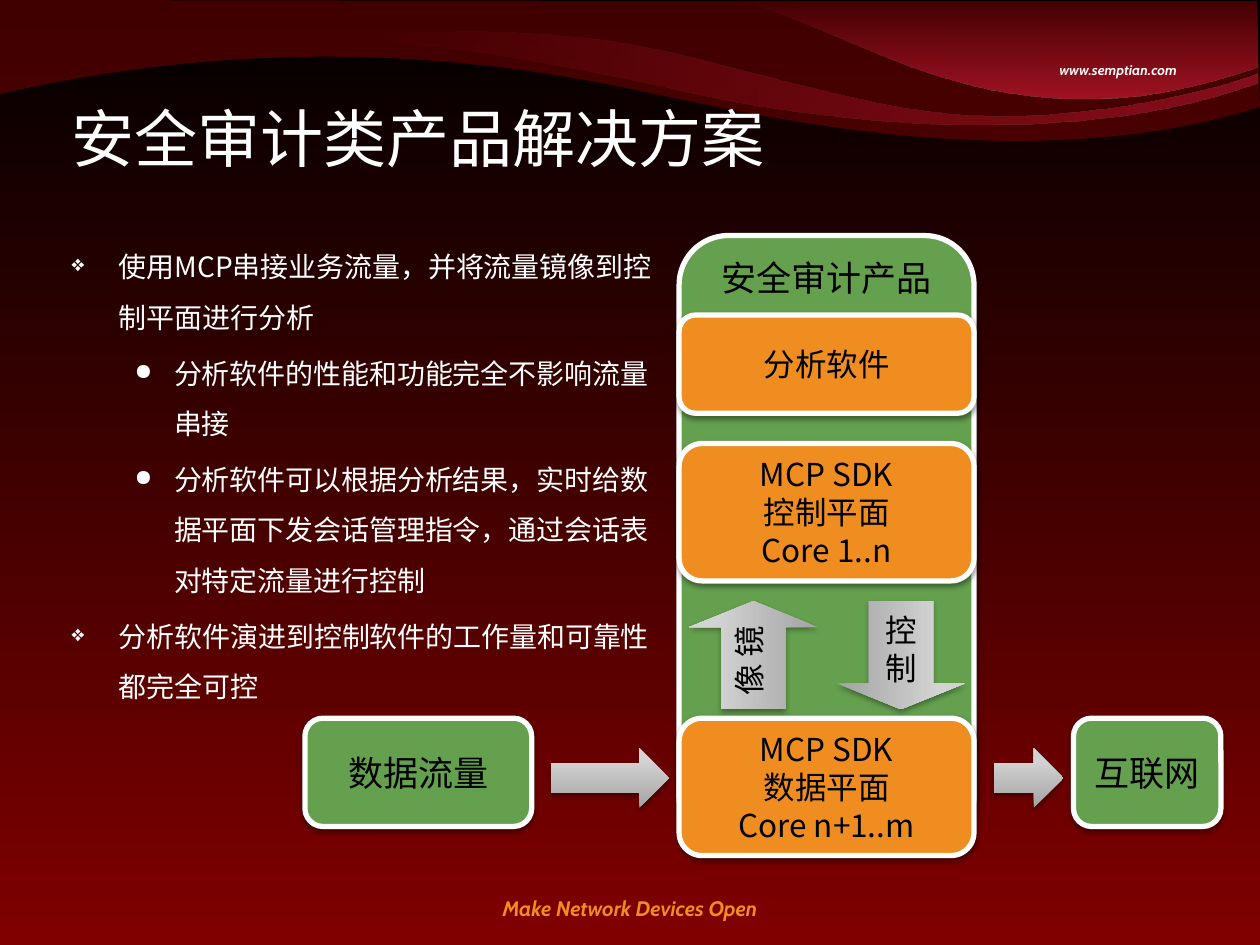
from lxml.etree import SubElement
from pptx import Presentation
from pptx.dml.color import RGBColor
from pptx.enum.shapes import MSO_SHAPE
from pptx.enum.text import MSO_ANCHOR, PP_ALIGN
from pptx.oxml.ns import qn
from pptx.util import Inches, Pt

CJK = "Noto Sans CJK SC"
WHITE, BLACK = "FFFFFF", "000000"
GREEN, ORANGE, CRIMSON, MAROON = "64A04E", "EF8D21", "CA1C35", "800000"
SILVER = [(0, "A3A3A3", 100), (80, "D3D3D3", 100), (100, "D4D4D4", 100)]


def color(hex_code):
    """Turn a hex string into a colour."""
    return RGBColor.from_string(hex_code)


def child(parent, tag, **attributes):
    """Append an XML child with the given attributes."""
    return SubElement(parent, qn(tag), {key: str(value) for key, value in attributes.items()})


def set_opacity(tint, opacity):
    """Make a colour element partly transparent."""
    if opacity < 100:
        child(tint, "a:alpha", val=opacity * 1000)


def paint_gradient(fill, owner, stops, angle):
    """Fill with (position, colour, opacity) stops along a clockwise angle."""
    fill.gradient()
    fill.gradient_angle = -angle % 360
    stop_list = next(owner.iter(qn("a:gsLst")))
    for old_stop in list(stop_list):
        stop_list.remove(old_stop)
    for position, hex_code, opacity in stops:
        stop = child(stop_list, "a:gs", pos=position * 1000)
        set_opacity(child(stop, "a:srgbClr", val=hex_code), opacity)


def cast_shadow(shape, opacity, distance):
    """Give a shape a soft shadow falling straight down."""
    effects = shape.element.spPr.find(qn("a:effectLst"))
    shadow = child(effects, "a:outerShdw", blurRad=Pt(3.1), dist=Pt(distance),
                   dir=90 * 60000, rotWithShape=0)
    set_opacity(child(shadow, "a:srgbClr", val=BLACK), opacity)


def write(shape, lines, size=18, font=CJK, fill=BLACK, bold=False, italic=False,
          align=PP_ALIGN.CENTER, anchor=MSO_ANCHOR.MIDDLE):
    """Write one paragraph per line and return the paragraphs."""
    frame = shape.text_frame
    frame.word_wrap = True
    frame.vertical_anchor = anchor
    frame.text = "\n".join(lines)
    for paragraph in frame.paragraphs:
        paragraph.alignment = align
        for run in paragraph.runs:
            run.font.size = Pt(size)
            run.font.name = font
            run.font.bold = bold
            run.font.italic = italic
            run.font.color.rgb = color(fill)
            child(run.font._element, "a:ea", typeface=font)
    return frame.paragraphs


def add_label(slide, box, lines, **text_format):
    """Add a text box and return its paragraphs."""
    return write(slide.shapes.add_textbox(*map(Inches, box)), lines, **text_format)


def add_block(slide, box, fill, lines, **text_format):
    """Add a rounded block with a white border."""
    block = slide.shapes.add_shape(MSO_SHAPE.ROUNDED_RECTANGLE, *map(Inches, box))
    block.shadow.inherit = False
    block.fill.solid()
    block.fill.fore_color.rgb = color(fill)
    block.line.color.rgb = color(WHITE)
    block.line.width = Pt(3)
    cast_shadow(block, 38, 1.6)
    write(block, lines, **text_format)


def add_arrow(slide, box, rotation=0):
    """Add a silver arrow pointing right before rotation."""
    arrow = slide.shapes.add_shape(MSO_SHAPE.RIGHT_ARROW, *map(Inches, box))
    arrow.shadow.inherit = False
    arrow.rotation = rotation
    paint_gradient(arrow.fill, arrow.element.spPr, SILVER, 270)
    arrow.line.fill.background()
    cast_shadow(arrow, 35, 1.8)
    return arrow


def add_exchange_arrow(slide, box, rotation, text_direction, caption):
    """Add a vertical arrow carrying a caption."""
    arrow = add_arrow(slide, box, rotation)
    arrow.adjustments[1] = 0.24
    write(arrow, [caption])
    arrow.text_frame._txBody.bodyPr.set("vert", text_direction)


def add_wave(slide, box, start, curves):
    """Add a closed outline of cubic curves that fills the box."""
    left, top, width, height = box
    corners = [(left, top), (left + width, top), (left + width, top + height),
               (left, top + height)]
    first, *others = [(Inches(x), Inches(y)) for x, y in corners]
    builder = slide.shapes.build_freeform(*first)
    builder.add_line_segments(others)
    wave = builder.convert_to_shape()
    outline = next(wave.element.iter(qn("a:path")))
    for segment in list(outline):
        outline.remove(segment)
    for tag, points in [("a:moveTo", [start]), *(("a:cubicBezTo", curve) for curve in curves)]:
        segment = child(outline, tag)
        for x, y in points:
            child(segment, "a:pt", x=Inches(x - left), y=Inches(y - top))
    child(outline, "a:close")
    wave.shadow.inherit = False
    wave.line.fill.background()
    return wave


def add_header(slide):
    """Draw the layered waves and the web address."""
    backdrop = add_wave(slide, (-0.01, 0, 10.01, 1.43), (-0.01, 0.75), [
        ((2.69, 0.12), (4.76, 0.66), (5.4, 0.79)),
        ((6.04, 0.91), (8.15, 1.43), (10, 0.85)),
        ((10, 0.85), (9.98, 0.34), (9.98, 0.01)),
        ((4.97, 0.01), (-0.01, 0), (-0.01, 0)),
        ((-0.01, 0.27), (-0.01, 0.49), (-0.01, 0.75)),
    ])
    backdrop.fill.solid()
    backdrop.fill.fore_color.rgb = color(MAROON)
    set_opacity(next(backdrop.element.spPr.iter(qn("a:srgbClr"))), 50)
    ribbon = add_wave(slide, (2.73, 0.22, 7.25, 1.1), (3.9, 0.43), [
        ((4.68, 0.56), (5.08, 0.64), (5.41, 0.72)),
        ((5.73, 0.79), (8.16, 1.32), (9.98, 0.66)),
        ((9.98, 0.66), (9.98, 0.68), (9.98, 0.58)),
        ((9.61, 0.73), (8.55, 0.96), (7.68, 0.91)),
        ((6.81, 0.87), (5.58, 0.42), (4.76, 0.32)),
        ((3.93, 0.22), (3.19, 0.25), (2.73, 0.31)),
        ((2.74, 0.32), (3.19, 0.33), (3.9, 0.43)),
    ])
    corner = add_wave(slide, (5.77, -0.01, 4.22, 1.29), (9.98, -0.01), [
        ((9.98, 0.26), (9.98, 0.53), (9.98, 0.53)),
        ((7.88, 1.27), (6.78, 0.18), (5.77, -0.01)),
        ((5.77, -0.01), (7.88, -0.01), (9.98, -0.01)),
    ])
    for wave, opacity, angle in [(ribbon, 50, 0), (corner, 70, 90)]:
        paint_gradient(wave.fill, wave.element.spPr,
                       [(0, CRIMSON, 0), (100, CRIMSON, opacity)], angle)


def add_slogans(slide):
    """Add the slogan at the foot and the web address in the header."""
    slogans = [
        ((0, 7.06, 10, 0.3), "Make Network Devices Open", 12, ORANGE, PP_ALIGN.CENTER),
        ((8.31, 0.44, 1.14, 0.23), "www.semptian.com", 8, WHITE, PP_ALIGN.LEFT),
    ]
    for box, text, size, fill, align in slogans:
        add_label(slide, box, [text], size=size, font="Cabin", fill=fill, bold=True,
                  italic=True, align=align, anchor=MSO_ANCHOR.TOP)


def add_points(slide, box, points):
    """Add the two-level bullet list of (level, text) points."""
    styles = [("❖", 3 / 8, -3 / 8), ("●", 13 / 16, -5 / 16)]
    paragraphs = add_label(slide, box, [text for _, text in points], size=16, fill=WHITE,
                           align=PP_ALIGN.LEFT, anchor=MSO_ANCHOR.TOP)
    for index, (paragraph, (level, _)) in enumerate(zip(paragraphs, points)):
        bullet, margin, indent = styles[level]
        paragraph.level = level
        paragraph.line_spacing = 1.5
        paragraph.space_before = Pt(3.2 if index else 0)
        properties = paragraph._p.get_or_add_pPr()
        properties.set("marL", str(Inches(margin)))
        properties.set("indent", str(Inches(indent)))
        child(child(properties, "a:buClr"), "a:srgbClr", val=WHITE)
        child(properties, "a:buSzPct", val=80000)
        child(properties, "a:buFont", typeface="OpenSymbol")
        child(properties, "a:buChar", char=bullet)


def add_product(slide, left, top, width, height):
    """Draw the audit product with its software layers and exchange arrows."""
    add_block(slide, (left, top, width, height), GREEN, ["安全审计产品"], size=20,
              anchor=MSO_ANCHOR.TOP)
    layers = [
        (3.83, 1.09, ["MCP SDK", "数据平面", "Core n+1..m"]),
        (1.65, 1.09, ["MCP SDK", "控制平面", "Core 1..n"]),
        (0.63, 0.78, ["分析软件"]),
    ]
    for offset, layer_height, lines in layers:
        add_block(slide, (left, top + offset, width, layer_height), ORANGE, lines)
    exchanges = [(0.16, 270, "eaVert", "镜像"), (1.33, 90, "vert270", "控制")]
    for offset, rotation, text_direction, caption in exchanges:
        add_exchange_arrow(slide, (left + offset, top + 2.82, 0.86, 1.02),
                           rotation, text_direction, caption)


def add_traffic(slide, left, top):
    """Draw the traffic source, the internet and the arrows between them."""
    for offset, width, caption in [(0, 1.8, "数据流量"), (6.1, 1.17, "互联网")]:
        add_block(slide, (left + offset, top, width, 0.86), GREEN, [caption], size=20)
    for offset, width in [(1.95, 0.94), (5.47, 0.55)]:
        add_arrow(slide, (left + offset, top + 0.24, width, 0.47))


def main():
    """Build the slide and save it."""
    presentation = Presentation()
    presentation.slide_width, presentation.slide_height = Inches(10), Inches(7.5)
    slide = presentation.slides.add_slide(presentation.slide_layouts[6])
    paint_gradient(slide.background.fill, slide.element,
                   [(0, BLACK, 100), (100, MAROON, 100)], 90)
    add_header(slide)
    add_slogans(slide)
    add_label(slide, (0.47, 0.55, 7.58, 1.08), ["安全审计类产品解决方案"], size=36, fill=WHITE,
              align=PP_ALIGN.LEFT)
    add_traffic(slide, 2.42, 5.7)
    add_product(slide, 5.39, 1.87, 2.34, 4.84)
    add_points(slide, (0.47, 1.8, 4.92, 3.91), [
        (0, "使用MCP串接业务流量，并将流量镜像到控制平面进行分析"),
        (1, "分析软件的性能和功能完全不影响流量串接"),
        (1, "分析软件可以根据分析结果，实时给数据平面下发会话管理指令，通过会话表对特定流量进行控制"),
        (0, "分析软件演进到控制软件的工作量和可靠性都完全可控"),
    ])
    presentation.save("out.pptx")


if __name__ == "__main__":
    main()
